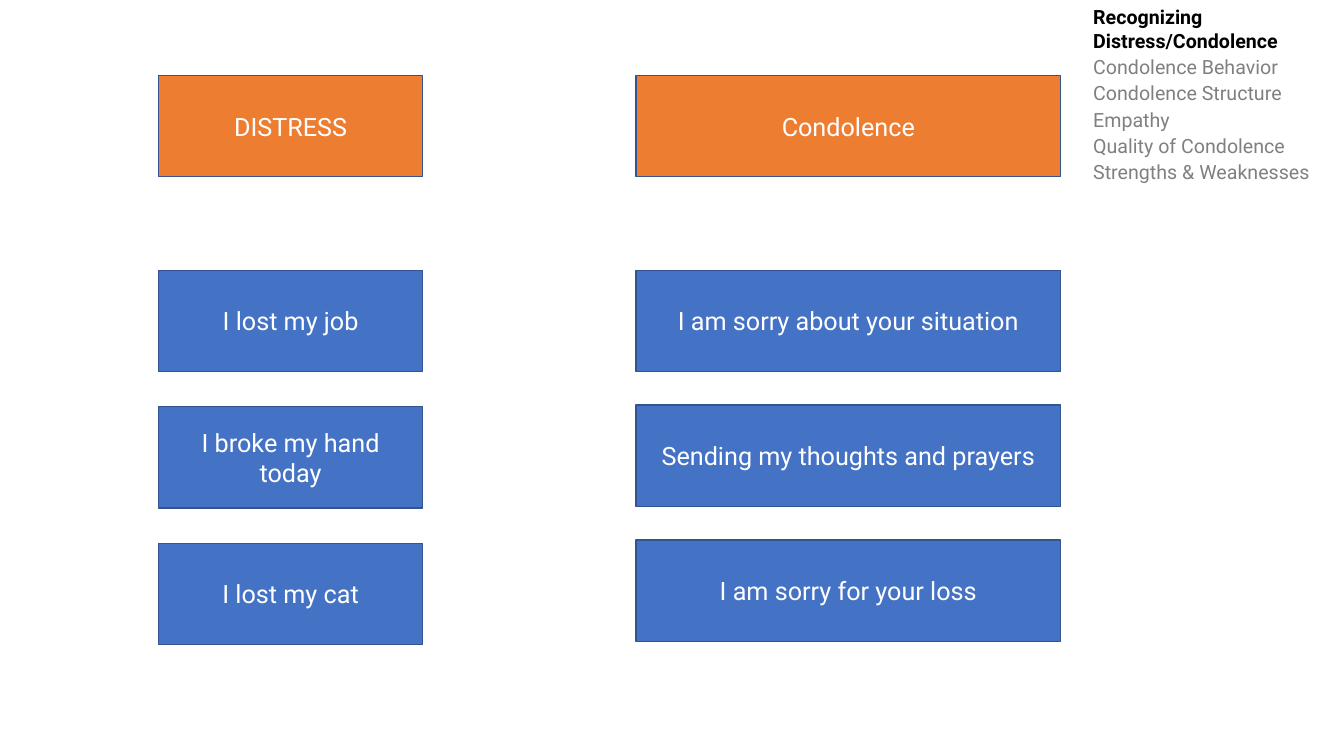
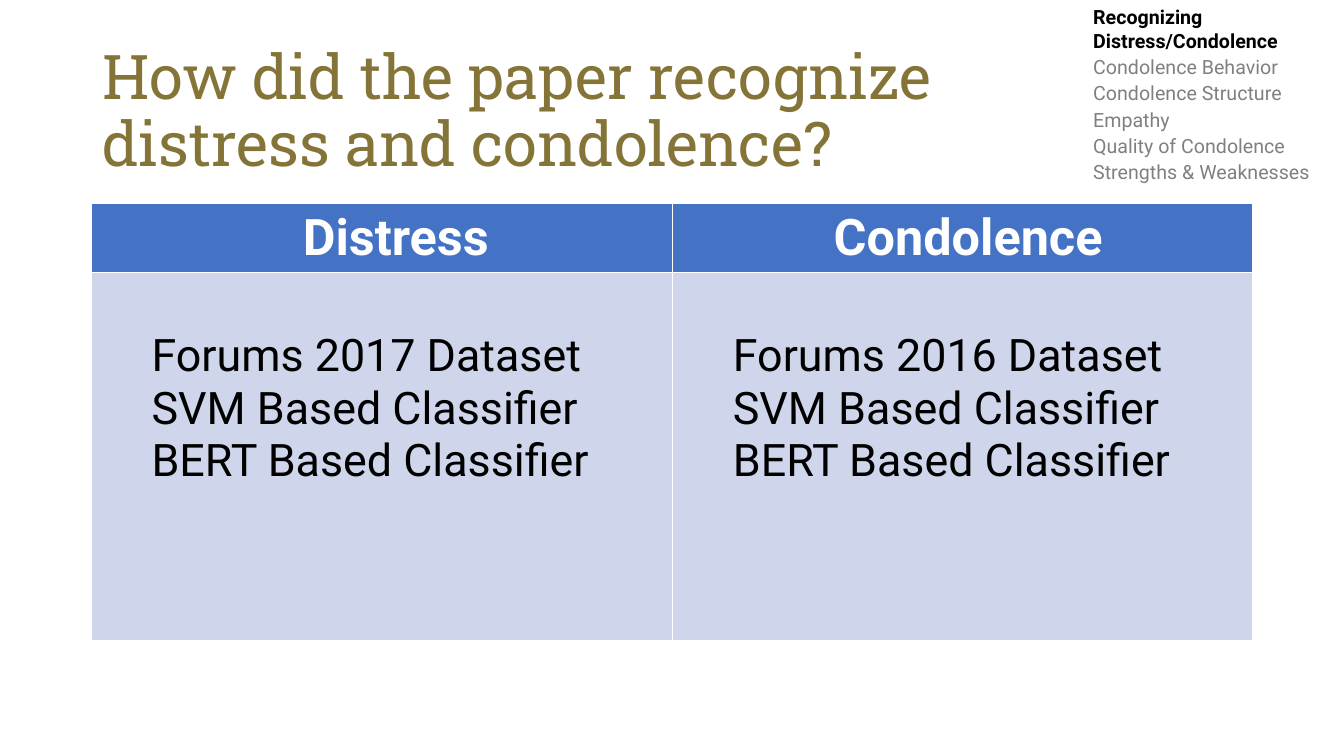
from dataclasses import dataclass
from typing import NamedTuple

from pptx import Presentation
from pptx.dml.color import RGBColor
from pptx.enum.shapes import MSO_SHAPE
from pptx.enum.text import MSO_ANCHOR, MSO_AUTO_SIZE, PP_ALIGN
from pptx.util import Cm, Pt

RECT = MSO_SHAPE.RECTANGLE
LEFT, CENTER = PP_ALIGN.LEFT, PP_ALIGN.CENTER
MIDDLE = MSO_ANCHOR.MIDDLE
NO_FIT, GROW = MSO_AUTO_SIZE.NONE, MSO_AUTO_SIZE.SHAPE_TO_FIT_TEXT
TITLE_ONLY, BLANK = 5, 6


@dataclass(frozen=True)
class Theme:
    body_font: str = "Roboto"
    title_font: str = "Roboto Slab"
    white: str = "FFFFFF"
    black: str = "000000"
    grey: str = "808080"
    gold: str = "857437"
    blue: str = "4472C4"
    blue_edge: str = "325491"
    pale_blue: str = "CFD5EA"
    orange: str = "ED7D31"
    title_size: int = 44
    head_size: int = 36
    list_size: int = 32
    label_size: int = 18
    agenda_size: int = 14


class Box(NamedTuple):
    x: float
    y: float
    w: float
    h: float

    def lengths(self):
        return [Cm(v) for v in self]


THEME = Theme()
AGENDA_BOX = Box(27.3, 0, 6.56, 4.8)
AGENDA = [
    "Recognizing Distress/Condolence",
    "Condolence Behavior",
    "Condolence Structure",
    "Empathy",
    "Quality of Condolence",
    "Strengths & Weaknesses",
]


def style(p, size, color, bold=False, font=THEME.body_font):
    for r in p.runs:
        r.font.name = font
        r.font.size = Pt(size)
        r.font.bold = bold
        r.font.color.rgb = RGBColor.from_string(color)


def paint(target, color):
    target.fill.solid()
    target.fill.fore_color.rgb = RGBColor.from_string(color)


def add_agenda(s, box, items, current):
    tf = s.shapes.add_textbox(*box.lengths()).text_frame
    tf.word_wrap = True
    tf.auto_size = GROW
    tf.text = "\n".join(items)
    for i, p in enumerate(tf.paragraphs):
        active = i == current
        p.space_after = Pt(2)
        style(p, THEME.agenda_size, THEME.black if active else THEME.grey, active)


def add_label(s, box, text, color):
    sp = s.shapes.add_shape(RECT, *box.lengths())
    sp.shadow.inherit = False
    paint(sp, color)
    sp.line.color.rgb = RGBColor.from_string(THEME.blue_edge)
    sp.line.width = Pt(1)
    tf = sp.text_frame
    tf.word_wrap = True
    tf.vertical_anchor = MIDDLE
    tf.text = text
    p = tf.paragraphs[0]
    p.alignment = CENTER
    style(p, THEME.label_size, THEME.white)


def add_examples(s, box, heading, examples, pitch):
    label_h, first = 2.55, 4.91
    add_label(s, box._replace(h=label_h), heading, THEME.orange)
    for i, text in enumerate(examples):
        y = box.y + first + i * pitch
        add_label(s, box._replace(y=y, h=label_h), text, THEME.blue)


def add_title(s, box, text):
    title = s.shapes.title
    title.left, title.top, title.width, title.height = box.lengths()
    tf = title.text_frame
    tf.auto_size = NO_FIT
    tf.vertical_anchor = MIDDLE
    tf.text = text
    p = tf.paragraphs[0]
    p.alignment = LEFT
    p.line_spacing = 0.9
    style(p, THEME.title_size, THEME.gold, font=THEME.title_font)


def fill_cell(cell, text, size, color, bold, fill, left, top):
    paint(cell, fill)
    cell.margin_left, cell.margin_top = Cm(left), Cm(top)
    cell.text_frame.text = text
    for p in cell.text_frame.paragraphs:
        style(p, size, color, bold)


def add_comparison(s, box, columns):
    head_h = 1.73
    table = s.shapes.add_table(2, len(columns), *box.lengths()).table
    table.rows[0].height = Cm(head_h)
    table.rows[1].height = Cm(box.h - head_h)
    for i, (heading, indent, width, items) in enumerate(columns):
        table.columns[i].width = Cm(width)
        fill_cell(table.cell(0, i), heading, THEME.head_size, THEME.white,
                  True, THEME.blue, indent, 0.13)
        fill_cell(table.cell(1, i), "\n".join(items), THEME.list_size,
                  THEME.black, False, THEME.pale_blue, 1.52, 1.45)


def examples_slide(prs):
    s = prs.slides.add_slide(prs.slide_layouts[BLANK])
    add_examples(s, Box(4, 1.9, 6.65, 14.4), "DISTRESS",
                 ["I lost my job", "I broke my hand today", "I lost my cat"], 3.44)
    add_examples(s, Box(16.03, 1.9, 10.7, 14.4), "Condolence",
                 ["I am sorry about your situation",
                  "Sending my thoughts and prayers",
                  "I am sorry for your loss"], 3.4)
    add_agenda(s, AGENDA_BOX, AGENDA, 0)


def method_slide(prs):
    s = prs.slides.add_slide(prs.slide_layouts[TITLE_ONLY])
    add_title(s, Box(2.33, 1.01, 25.4, 3.68),
              "How did the paper recognize distress and condolence?")
    classifiers = ["SVM Based Classifier", "BERT Based Classifier"]
    add_comparison(s, Box(2.3, 5.12, 29.26, 11), [
        ("Distress", 5.33, 14.65, ["Forums 2017 Dataset"] + classifiers),
        ("Condolence", 4.06, 14.61, ["Forums 2016 Dataset"] + classifiers),
    ])
    add_agenda(s, AGENDA_BOX, AGENDA, 0)


def main():
    prs = Presentation()
    prs.slide_width, prs.slide_height = Cm(33.87), Cm(19.05)
    examples_slide(prs)
    method_slide(prs)
    prs.save("out.pptx")


if __name__ == "__main__":
    main()
